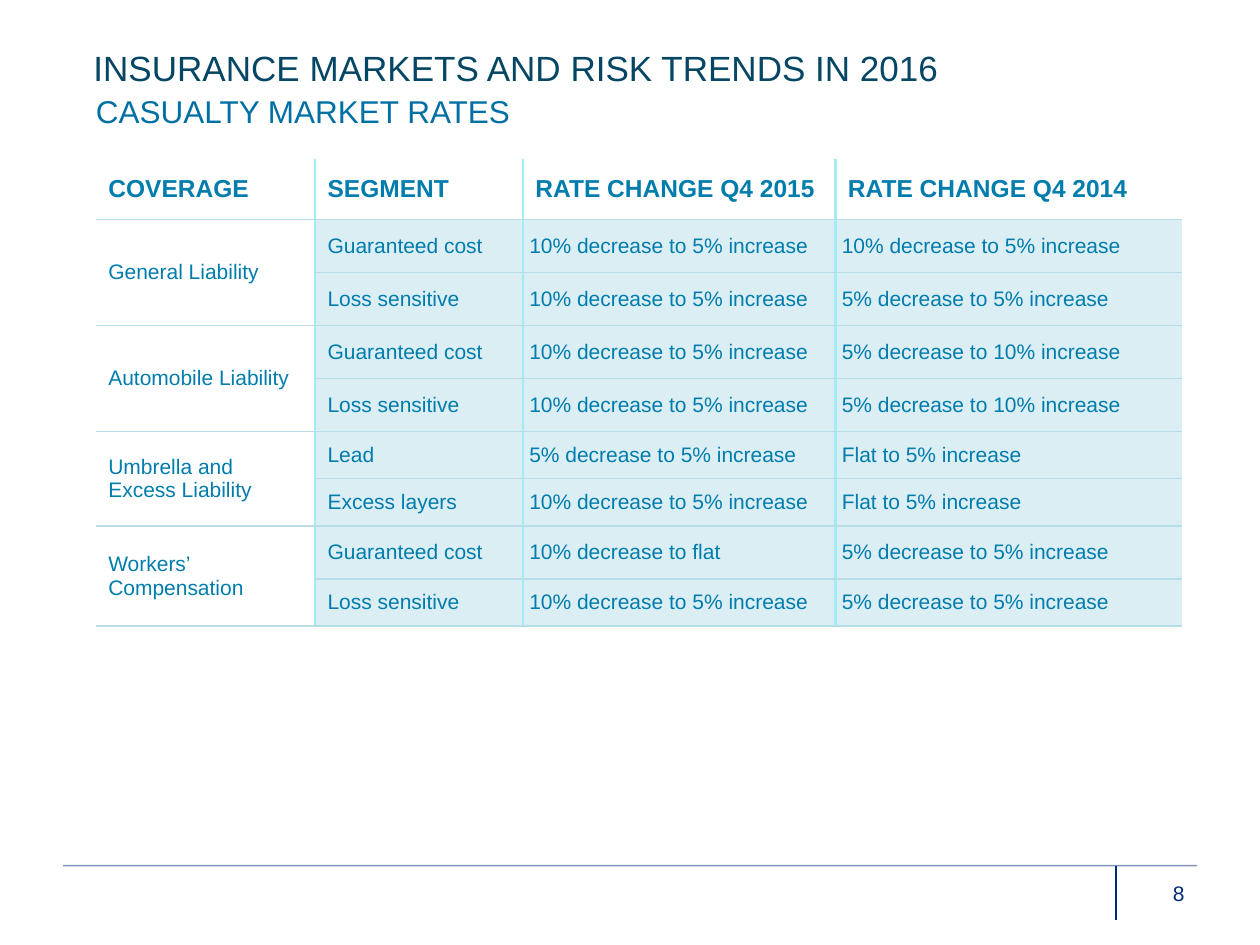
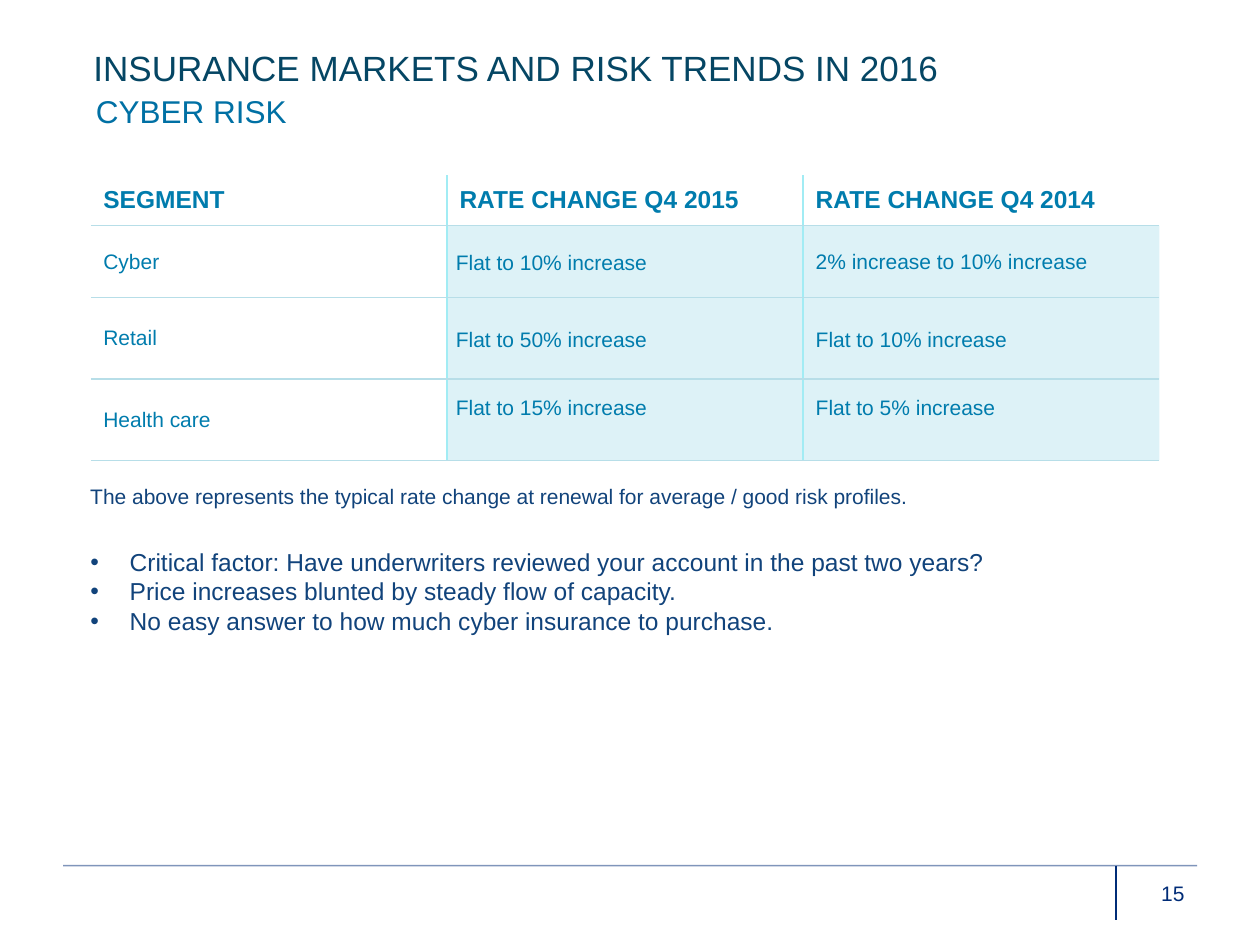
from lxml.etree import SubElement
from pptx import Presentation
from pptx.dml.color import RGBColor
from pptx.enum.shapes import MSO_CONNECTOR
from pptx.enum.text import MSO_ANCHOR, MSO_AUTO_SIZE, PP_ALIGN
from pptx.oxml.ns import qn
from pptx.util import Cm, Pt

COLORS = {
    "title": "054664", "subtitle": "0070A4", "table_text": "007CAD",
    "note": "11437B", "footer": "002C77", "column_line": "A2ECF4",
    "row_line": "B7DEE8", "casualty_fill": "DBEEF4", "cyber_fill": "86D3E4",
}
FONT = "Arial"


def add_text(paragraph, text, size, color, bold=False):
    """Add one run per line of text, with breaks between them."""
    for number, line in enumerate(text.split("\n")):
        if number:
            paragraph.add_line_break()
        run = paragraph.add_run()
        run.text = line
        run.font.name, run.font.size, run.font.bold = FONT, Pt(size), bold
        run.font.color.rgb = RGBColor.from_string(COLORS[color])


def add_rate_table(slide, left, top, widths, heights, rows, fill, alpha=100):
    """Draw a rate table: plain header and first column, tinted rates."""
    table = slide.shapes.add_table(len(rows), len(widths), Cm(left), Cm(top),
                                   Cm(sum(widths)), Cm(sum(heights))).table
    table.first_row = table.horz_banding = False
    for column, width in zip(table.columns, widths):
        column.width = Cm(width)
    for row, height in zip(table.rows, heights):
        row.height = Cm(height)
    # A missing first entry continues the label above it
    for r, values in enumerate(rows):
        if values[0] is None:
            table.cell(r - 1, 0).merge(table.cell(r, 0))
    for r, values in enumerate(rows):
        for c, text in enumerate(values):
            cell = table.cell(r, c)
            cell.vertical_anchor = MSO_ANCHOR.MIDDLE
            if text:
                add_text(cell.text_frame.paragraphs[0], text,
                         12 if r else 14, "table_text", bold=r == 0)
            # Inner column lines, and a line under every row
            merged_below = r + 1 < len(rows) and rows[r + 1][0] is None and c == 0
            edges = {
                "a:lnL": ("column_line", 1.5) if c else None,
                "a:lnR": ("column_line", 1.5) if c < len(widths) - 1 else None,
                "a:lnT": ("row_line", 1) if r and not cell.is_spanned else None,
                "a:lnB": ("row_line", 1) if not merged_below or cell.is_merge_origin else None,
            }
            properties = cell._tc.get_or_add_tcPr()
            for tag, edge in edges.items():
                line = SubElement(properties, qn(tag))
                if edge:
                    line.set("w", str(Pt(edge[1])))
                    solid = SubElement(line, qn("a:solidFill"))
                    SubElement(solid, qn("a:srgbClr"), val=COLORS[edge[0]])
                else:
                    SubElement(line, qn("a:noFill"))
            if r and c:
                cell.fill.solid()
                cell.fill.fore_color.rgb = RGBColor.from_string(COLORS[fill])
                if alpha < 100:
                    tint = properties.find(qn("a:solidFill"))[0]
                    SubElement(tint, qn("a:alpha"), val=str(alpha * 1000))
            else:
                cell.fill.background()
    return table


prs = Presentation()
prs.slide_width, prs.slide_height = Cm(25.4), Cm(19.05)
casualty = prs.slides.add_slide(prs.slide_layouts[1])  # title, body
cyber = prs.slides.add_slide(prs.slide_layouts[3])     # title, two bodies

# Shared headings and footer
for slide, topic, page in ((casualty, "CASUALTY MARKET RATES", "8"),
                           (cyber, "CYBER RISK", "15")):
    headings = (
        (slide.shapes.title, "INSURANCE MARKETS AND RISK TRENDS IN 2016",
         20, "title", (1.63, 0.81, 22.23, 1.37)),
        (slide.placeholders[1], topic, 18, "subtitle", (1.68, 1.73, 19.61, 1.07)),
    )
    for heading, text, size, color, place in headings:
        heading.left, heading.top, heading.width, heading.height = map(Cm, place)
        frame = heading.text_frame
        frame.auto_size, frame.vertical_anchor = MSO_AUTO_SIZE.NONE, MSO_ANCHOR.TOP
        paragraph = frame.paragraphs[0]
        layout = paragraph._p.get_or_add_pPr()
        layout.set("marL", "0")
        layout.set("indent", "0")
        SubElement(layout, qn("a:buNone"))
        paragraph.alignment, paragraph.space_before = PP_ALIGN.LEFT, Pt(0)
        add_text(paragraph, text, size, color)

    for x1, y1, x2, y2, alpha in ((1.27, 17.45, 24.13, 17.45, 50),
                                  (22.5, 17.45, 22.5, 18.54, 100)):
        rule = slide.shapes.add_connector(MSO_CONNECTOR.STRAIGHT,
                                          Cm(x1), Cm(y1), Cm(x2), Cm(y2))
        rule.line.width = Pt(1)
        rule.line.color.rgb = RGBColor.from_string(COLORS["footer"])
        if alpha < 100:
            ink = rule.line._ln.find(qn("a:solidFill"))[0]
            SubElement(ink, qn("a:alpha"), val=str(alpha * 1000))
        SubElement(rule._element.spPr, qn("a:effectLst"))

    page_number = slide.shapes.add_textbox(Cm(22.78), Cm(17.63), Cm(1.35), Cm(0.91))
    page_number.text_frame.word_wrap = True
    paragraph = page_number.text_frame.paragraphs[0]
    paragraph.alignment = PP_ALIGN.RIGHT
    add_text(paragraph, page, 12, "footer")

# Casualty market rates
RATE_HEADERS = ["RATE CHANGE Q4 2015", "RATE CHANGE Q4 2014"]
casualty_rows = [
    ["COVERAGE", "SEGMENT", *RATE_HEADERS],
    ["General Liability", "Guaranteed cost",
     "10% decrease to 5% increase", "10% decrease to 5% increase"],
    [None, "Loss sensitive", "10% decrease to 5% increase", "5% decrease to 5% increase"],
    ["Automobile Liability", "Guaranteed cost",
     "10% decrease to 5% increase", "5% decrease to 10% increase"],
    [None, "Loss sensitive", "10% decrease to 5% increase", "5% decrease to 10% increase"],
    ["Umbrella and \nExcess Liability", "Lead",
     "5% decrease to 5% increase", "Flat to 5% increase"],
    [None, "Excess layers", "10% decrease to 5% increase", "Flat to 5% increase"],
    ["Workers’\nCompensation", "Guaranteed cost",
     "10% decrease to flat", "5% decrease to 5% increase"],
    [None, "Loss sensitive", "10% decrease to 5% increase", "5% decrease to 5% increase"],
]
casualty_table = add_rate_table(
    casualty, 1.93, 3.2, [4.42, 4.19, 6.3, 6.99],
    [1.22] + [1.07] * 4 + [0.95, 0.95, 1.07, 0.95], casualty_rows, "casualty_fill")
for r in range(1, len(casualty_rows)):
    for c in (2, 3):
        rate = casualty_table.cell(r, c)
        rate.margin_left = rate.margin_right = Cm(0.13)

# Cyber rates
cyber_rows = [
    ["SEGMENT", *RATE_HEADERS],
    ["Cyber", "Flat to 10% increase", "2% increase to 10% increase"],
    ["Retail", "Flat to 50% increase", "Flat to 10% increase"],
    ["Health care", "Flat to 15% increase", "Flat to 5% increase"],
]
cyber_table = add_rate_table(cyber, 1.83, 3.53, [7.18] * 3, [1.02, 1.45, 1.64, 1.64],
                             cyber_rows, "cyber_fill", alpha=28)
for r in range(1, len(cyber_rows)):
    rate_2015, rate_2014 = cyber_table.cell(r, 1), cyber_table.cell(r, 2)
    rate_2015.margin_left = rate_2015.margin_right = Cm(0.18)
    rate_2015.margin_top = rate_2015.margin_bottom = 0
    rate_2015.text_frame.paragraphs[0].line_spacing = 1.15
    if r > 1:
        rate_2014.text_frame.paragraphs[0].line_spacing = 1.15
# Health care rates sit above the middle of their row
rate_2015.margin_bottom, rate_2014.margin_bottom = Cm(0.53), Cm(0.66)

# Note under the cyber table
note = cyber.shapes.add_textbox(Cm(1.57), Cm(9.63), Cm(21.13), Cm(0.76))
note.text_frame.word_wrap = True
add_text(note.text_frame.paragraphs[0],
         "The above represents the typical rate change at renewal "
         "for average / good risk profiles.", 12, "note")

# Cyber takeaways
takeaways = cyber.placeholders[2]
takeaways.left, takeaways.top = Cm(1.57), Cm(10.9)
takeaways.width, takeaways.height = Cm(20.4), Cm(2.06)
takeaways.text_frame.auto_size = MSO_AUTO_SIZE.NONE
for number, point in enumerate((
        "Critical factor: Have underwriters reviewed your account in the past two years?",
        "Price increases blunted by steady flow of capacity.",
        "No easy answer to how much cyber insurance to purchase.")):
    frame = takeaways.text_frame
    paragraph = frame.add_paragraph() if number else frame.paragraphs[0]
    layout = paragraph._p.get_or_add_pPr()
    layout.set("marL", str(Cm(0.79)))
    layout.set("indent", str(-Cm(0.79)))
    SubElement(layout, qn("a:buFont"), typeface=FONT)
    SubElement(layout, qn("a:buChar"), char="•")
    paragraph.space_before = Pt(0)
    add_text(paragraph, point, 14, "note")

prs.save("out.pptx")
